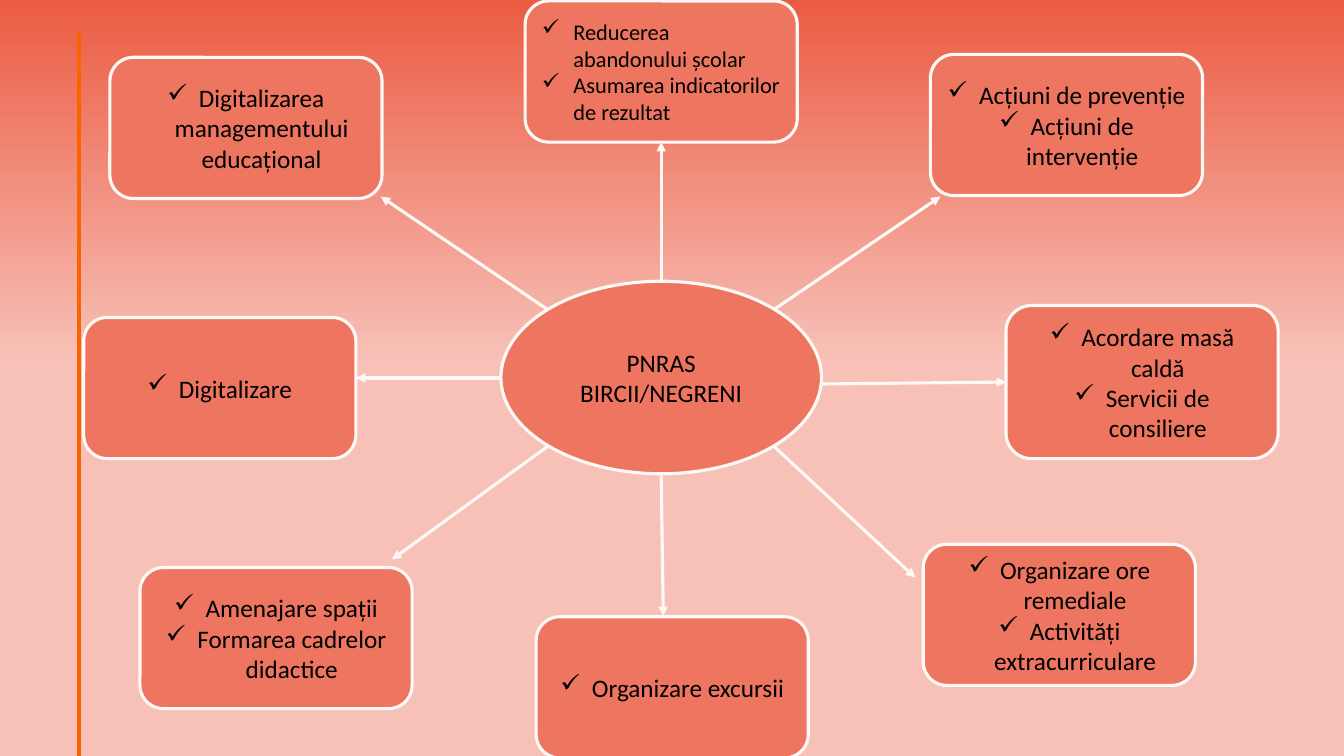
from lxml import etree
from pptx import Presentation
from pptx.dml.color import RGBColor
from pptx.enum.shapes import MSO_CONNECTOR, MSO_SHAPE
from pptx.enum.text import MSO_ANCHOR, PP_ALIGN
from pptx.oxml.ns import qn
from pptx.util import Pt

ELLIPSE = MSO_SHAPE.OVAL
ROUNDED = MSO_SHAPE.ROUNDED_RECTANGLE
STRAIGHT = MSO_CONNECTOR.STRAIGHT
MIDDLE = MSO_ANCHOR.MIDDLE
CENTER = PP_ALIGN.CENTER
LEFT = PP_ALIGN.LEFT

BOX_WIDTH = 194.4
BOX_HEIGHT = 100.8
SIDE_LEFT = 1
SIDE_BOTTOM = 2


def color(value):
    return RGBColor.from_string(value)


class Diagram:
    font = "Calibri"
    fill = "EE7661"
    outline = "FFF9F5"
    ink = "000000"
    weight = 2.25
    indent = 22.5

    def __init__(self, page):
        self.page = page

    def background(self, top, bottom, end):
        fill = self.page.background.fill
        fill.gradient()
        fill.gradient_angle = 270
        for stop, value, position in zip(fill.gradient_stops, (top, bottom), (0, end)):
            stop.color.rgb = color(value)
            stop.position = position

    def node(self, kind, left, top, width, height, lines, size=18, align=CENTER, bullets=True):
        shape = self.page.shapes.add_shape(kind, Pt(left), Pt(top), Pt(width), Pt(height))
        shape.shadow.inherit = False
        shape.fill.solid()
        shape.fill.fore_color.rgb = color(self.fill)
        shape.line.color.rgb = color(self.outline)
        shape.line.width = Pt(self.weight)
        frame = shape.text_frame
        frame.word_wrap = True
        frame.vertical_anchor = MIDDLE
        frame.text = "\n".join(lines)
        for para in frame.paragraphs:
            para.alignment = align
            if bullets:
                self.bullet(para)
            for span in para.runs:
                span.font.name = self.font
                span.font.size = Pt(size)
                span.font.color.rgb = color(self.ink)
        return shape

    def bullet(self, para):
        properties = para._p.get_or_add_pPr()
        properties.set("marL", str(Pt(self.indent)))
        properties.set("indent", str(-Pt(self.indent)))
        etree.SubElement(properties, qn("a:buChar")).set("char", "✓")

    def line(self, start, end, value, weight):
        points = [Pt(length) for length in (*start, *end)]
        connector = self.page.shapes.add_connector(STRAIGHT, *points)
        connector.line.color.rgb = color(value)
        connector.line.width = Pt(weight)
        etree.SubElement(connector._element.spPr, qn("a:effectLst"))
        return connector

    def arrow(self, start, end, target, side):
        connector = self.line(start, end, self.outline, self.weight)
        stroke = connector.line._get_or_add_ln()
        etree.SubElement(stroke, qn("a:tailEnd")).set("type", "triangle")
        if side is not None:
            connector.end_connect(target, side)


BRANCHES = [
    (["Digitalizarea managementului educațional"],
     (78.5, 41), BOX_HEIGHT, (391, 221), (272, 140.4), None),
    (["Digitalizare"],
     (59.8, 226.8), BOX_HEIGHT, (357.8, 270), (254.2, 270), None),
    (["Amenajare spații", "Formarea cadrelor didactice"],
     (100, 405.4), BOX_HEIGHT, (391, 319), (280, 399.6), None),
    (["Organizare excursii"],
     (383, 440.6), BOX_HEIGHT, (472.3, 339.8), (473.8, 440), None),
    (["Organizare ore remediale", "Activități extracurriculare"],
     (659.5, 388.8), BOX_HEIGHT, (553, 319), (653.8, 412.6), None),
    (["Acordare masă caldă", "Servicii de consiliere"],
     (718.6, 218.2), 109.4, (586.8, 274.3), (718, 274.3), SIDE_LEFT),
    (["Acțiuni de prevenție", "Acțiuni de intervenție"],
     (664.6, 38.9), BOX_HEIGHT, (553, 221), (671.8, 140.4), None),
    (["Reducerea abandonului școlar", "Asumarea indicatorilor de rezultat"],
     (375.1, 0.7), BOX_HEIGHT, (472.3, 200.9), (473.8, 100.8), SIDE_BOTTOM),
]


def main():
    deck = Presentation()
    deck.slide_width = Pt(960)
    deck.slide_height = Pt(540)
    diagram = Diagram(deck.slides.add_slide(deck.slide_layouts[6]))
    diagram.background("EB5C43", "F7C1B8", 0.48)
    diagram.node(ELLIPSE, 357.8, 200.9, 229, 137.5, ["PNRAS BIRCII/NEGRENI"], bullets=False)
    for lines, corner, height, start, end, side in BRANCHES:
        size, align = (16, LEFT) if side == SIDE_BOTTOM else (18, CENTER)
        box = diagram.node(ROUNDED, *corner, BOX_WIDTH, height, lines, size, align)
        diagram.arrow(start, end, box, side)
    diagram.line((56.2, 22.3), (56.2, 540), "FA6400", 3)
    deck.save("out.pptx")


if __name__ == "__main__":
    main()
